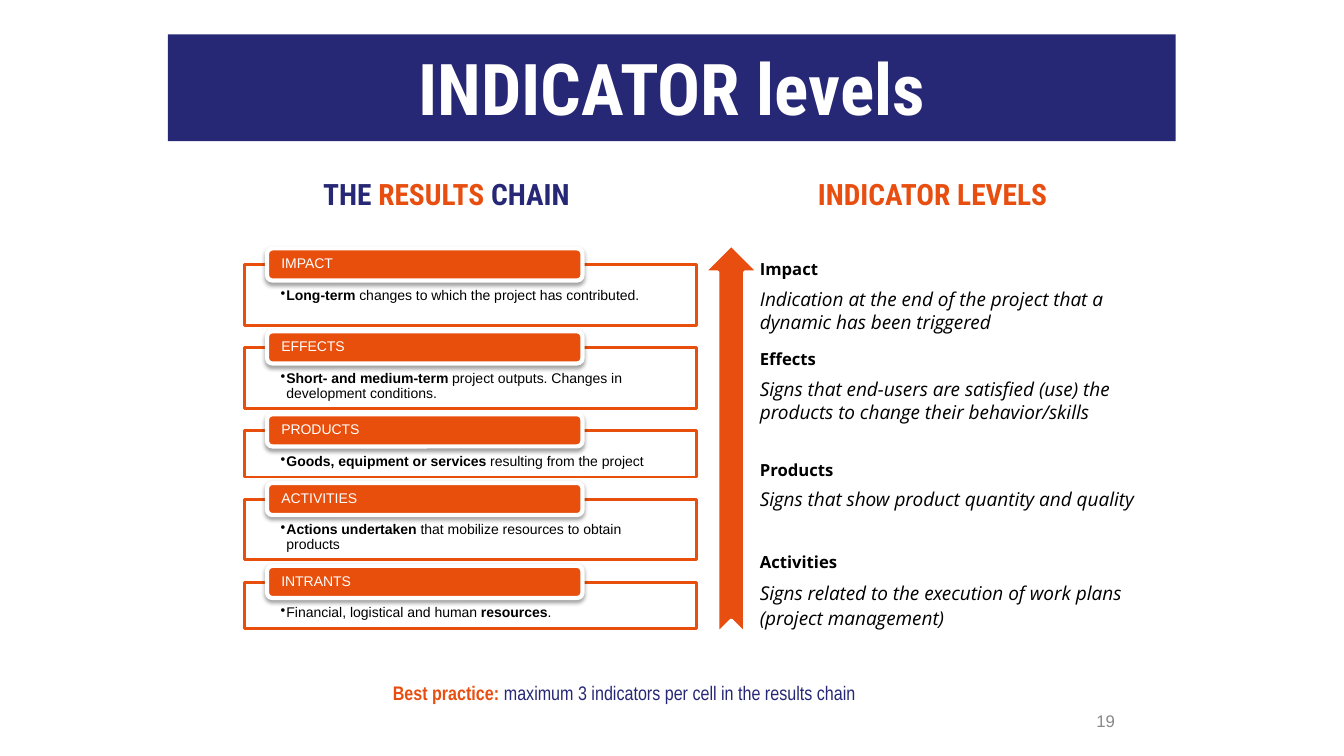
from dataclasses import dataclass, replace

from lxml import etree
from pptx import Presentation
from pptx.dml.color import RGBColor
from pptx.enum.shapes import MSO_SHAPE
from pptx.enum.text import MSO_ANCHOR, MSO_AUTO_SIZE, PP_ALIGN
from pptx.oxml.ns import qn
from pptx.util import Cm, Pt

RECTANGLE = MSO_SHAPE.RECTANGLE
ROUNDED = MSO_SHAPE.ROUNDED_RECTANGLE
NOTCHED_ARROW = MSO_SHAPE.NOTCHED_RIGHT_ARROW
TOP, MIDDLE = MSO_ANCHOR.TOP, MSO_ANCHOR.MIDDLE
FIXED, GROW = MSO_AUTO_SIZE.NONE, MSO_AUTO_SIZE.SHAPE_TO_FIT_TEXT
LEFT, CENTER, RIGHT, JUSTIFY = (
    PP_ALIGN.LEFT, PP_ALIGN.CENTER, PP_ALIGN.RIGHT, PP_ALIGN.JUSTIFY)


@dataclass(frozen=True)
class Style:
    font: str
    size: float
    color: str
    bold: bool = False
    italic: bool = False


@dataclass(frozen=True)
class Theme:
    navy: str = "262775"
    orange: str = "E84E0F"
    chain_orange: str = "E84E0C"
    white: str = "FFFFFF"
    black: str = "000000"
    grey: str = "888888"
    banner: Style = Style("Roboto Condensed", 51, white, bold=True)
    heading: Style = Style("Roboto Condensed", 21, orange, bold=True)
    tab: Style = Style("Arial", 10, white)
    body: Style = Style("Arial", 10, black)
    body_bold: Style = Style("Arial", 10, black, bold=True)
    level_name: Style = Style("Open Sans", 11.9, black, bold=True)
    level_text: Style = Style("Open Sans", 13.6, black, italic=True)
    advice: Style = Style("Arial Narrow", 14, navy)
    number: Style = Style("Arial", 12, grey)


THEME = Theme()
DEFAULT_INSETS = (0.25, 0.13, 0.25, 0.13)
NO_INSETS = (0, 0, 0, 0)

CHAIN_LEFT, CHAIN_TOP, CHAIN_WIDTH, CHAIN_GAP = 6.17, 6.67, 11.38, 0.56
ONE_LINE, TWO_LINES = 1.17, 1.53
CHAIN = [
    ("IMPACT", TWO_LINES, [
        ("Long-term ", THEME.body_bold),
        ("changes to which the project has contributed.", THEME.body)]),
    ("EFFECTS", TWO_LINES, [
        ("Short- and medium-term ", THEME.body_bold),
        ("project outputs. Changes in development conditions.", THEME.body)]),
    ("PRODUCTS", ONE_LINE, [
        ("Goods, equipment or services ", THEME.body_bold),
        ("resulting from the project", THEME.body)]),
    ("ACTIVITIES", TWO_LINES, [
        ("Actions undertaken ", THEME.body_bold),
        ("that mobilize resources to obtain products", THEME.body)]),
    ("INTRANTS", ONE_LINE, [
        ("Financial, logistical and human ", THEME.body),
        ("resources", THEME.body_bold),
        (".", THEME.body)]),
]

# Name, description, top, height, line spacing
LEVELS = [
    ("Impact", "Indication at the end of the project that a dynamic has been triggered",
     6.53, 1.88, 1.0),
    ("Effects", "Signs that end-users are satisfied (use) the products to change "
     "their behavior/skills", 8.79, 1.88, 1.0),
    ("Products", "Signs that show product quantity and quality", 11.58, 1.3, 1.0),
    ("Activities", "Signs related to the execution of work plans (project management)",
     13.87, 2.01, 1.07),
]


def rgb(color):
    return RGBColor.from_string(color)


def add_child(parent, tag, **attributes):
    return etree.SubElement(parent, qn(tag), attributes)


def write_runs(paragraph, runs, align=LEFT, spacing=1.0, before=0):
    paragraph.alignment = align
    paragraph.line_spacing = spacing
    paragraph.space_before = Pt(before)
    for text, style in runs:
        run = paragraph.add_run()
        run.text = text
        run.font.name = style.font
        run.font.size = Pt(style.size)
        run.font.color.rgb = rgb(style.color)
        run.font.bold = style.bold
        run.font.italic = style.italic


def set_frame(shape, insets=DEFAULT_INSETS, anchor=TOP, auto_size=FIXED):
    frame = shape.text_frame
    frame.word_wrap = True
    frame.auto_size = auto_size
    frame.vertical_anchor = anchor
    (frame.margin_left, frame.margin_top,
     frame.margin_right, frame.margin_bottom) = map(Cm, insets)
    return frame


def add_text(slide, box, runs, align=LEFT, spacing=1.0, **frame_options):
    shape = slide.shapes.add_textbox(*map(Cm, box))
    frame = set_frame(shape, **frame_options)
    write_runs(frame.paragraphs[0], runs, align, spacing)
    return frame


def add_block(slide, kind, box, fill, line=None, line_width=2):
    shape = slide.shapes.add_shape(kind, *map(Cm, box))
    shape.shadow.inherit = False
    shape.fill.solid()
    shape.fill.fore_color.rgb = rgb(fill)
    if line:
        shape.line.color.rgb = rgb(line)
        shape.line.width = Pt(line_width)
    else:
        shape.line.fill.background()
    return shape


def add_soft_shadow(shape):
    effects = shape._element.spPr.find(qn("a:effectLst"))
    shadow = add_child(effects, "a:outerShdw", blurRad=str(Pt(3.1)), dist=str(Pt(1.6)),
                       dir="5400000", rotWithShape="0")
    color = add_child(shadow, "a:srgbClr", val=THEME.black)
    add_child(color, "a:alpha", val="37000")


def set_bullet(paragraph):
    properties = paragraph._p.get_or_add_pPr()
    properties.set("marL", str(Cm(0.15)))
    properties.set("indent", str(-Cm(0.15)))
    add_child(properties, "a:buChar", char="•")


def add_chain_step(slide, top, height, name, runs):
    body = add_block(slide, RECTANGLE, (CHAIN_LEFT, top, CHAIN_WIDTH, height),
                     THEME.white, THEME.chain_orange)
    paragraph = set_frame(body, (0.9, 0.59, 0.9, 0.2)).paragraphs[0]
    write_runs(paragraph, runs, spacing=0.9)
    set_bullet(paragraph)

    tab = add_block(slide, ROUNDED, (CHAIN_LEFT + 0.56, top - 0.41, 7.95, 0.81),
                    THEME.chain_orange, THEME.white, 3)
    add_soft_shadow(tab)
    frame = set_frame(tab, (0.32, 0, 0.32, 0), MIDDLE)
    write_runs(frame.paragraphs[0], [(name, THEME.tab)], spacing=0.9)


def add_results_chain(slide):
    top = CHAIN_TOP
    for name, height, runs in CHAIN:
        add_chain_step(slide, top, height, name, runs)
        top += height + CHAIN_GAP


def add_level(slide, name, description, top, height, spacing):
    frame = add_text(slide, (19.15, top, 10.24, height), [(name, THEME.level_name)],
                     spacing=spacing, insets=NO_INSETS, auto_size=GROW)
    write_runs(frame.add_paragraph(), [(description, THEME.level_text)],
               spacing=spacing, before=6)


def set_title(slide, box, text):
    title = slide.shapes.title
    title.left, title.top, title.width, title.height = map(Cm, box)
    frame = set_frame(title, anchor=MIDDLE)
    write_runs(frame.paragraphs[0], [(text, THEME.heading)], CENTER)


def main():
    presentation = Presentation()
    presentation.slide_width, presentation.slide_height = Cm(33.87), Cm(19.05)
    slide = presentation.slides.add_slide(presentation.slide_layouts[5])

    banner = add_block(slide, RECTANGLE, (4.23, 0.87, 25.4, 2.69), THEME.navy)
    frame = set_frame(banner, (0.25, 0.25, 0.25, 0.25))
    write_runs(frame.paragraphs[0], [("INDICATOR levels", THEME.banner)], CENTER)

    set_title(slide, (17.81, 4.24, 11.38, 1.3), "INDICATOR LEVELS")
    navy_heading = replace(THEME.heading, color=THEME.navy)
    add_text(slide, (5.56, 4.24, 11.38, 1.3),
             [("THE ", navy_heading), ("RESULTS", THEME.heading), (" CHAIN", navy_heading)],
             CENTER, anchor=MIDDLE)

    add_results_chain(slide)
    arrow = add_block(slide, NOTCHED_ARROW, (13.54, 10.39, 9.78, 1.35),
                      THEME.orange, THEME.white)
    arrow.rotation = 270
    for level in LEVELS:
        add_level(slide, *level)

    advice_lead = replace(THEME.advice, color=THEME.orange, bold=True)
    add_text(slide, (9.65, 17.09, 17.53, 0.79),
             [("Best practice: ", advice_lead),
              ("maximum 3 indicators per cell in the results chain", THEME.advice)],
             JUSTIFY, 0.9, auto_size=GROW)
    add_text(slide, (22.43, 17.65, 5.92, 1.02), [("19", THEME.number)], RIGHT, anchor=MIDDLE)

    presentation.save("out.pptx")


if __name__ == "__main__":
    main()
